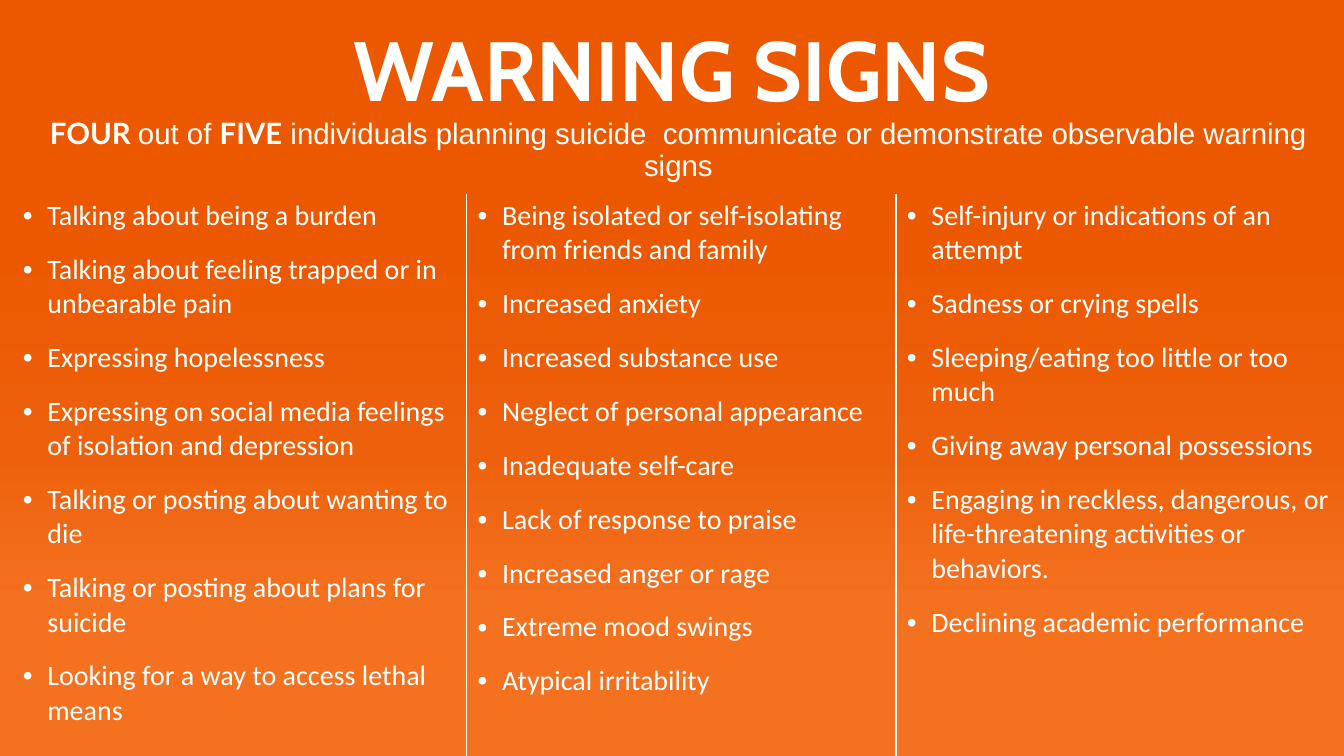
import copy

import lxml.etree
import pptx
import pptx.dml.color
import pptx.enum.text
import pptx.oxml
import pptx.oxml.ns
import pptx.util
from pptx.util import Cm, Pt

COLORS = {"text": "FFFFFF", "bottom": "F47120", "middle": "ED610C", "top": "EC5800"}
WHITE = pptx.dml.color.RGBColor.from_string(COLORS["text"])
CENTER = pptx.enum.text.PP_ALIGN.CENTER
NO_GRID_STYLE = "{2D5ABB26-0587-4C30-8999-92F81FD0307C}"
qn = pptx.oxml.ns.qn

COLUMN_WIDTHS = [11.76, 10.82, 11.28]
ROW_HEIGHTS = [2.11, 16.28]
TEXT_INDENTS = [0.94, 0.64, 0.64]
BULLET_HANG = 0.62
BORDER_SIDES = [["lnR"], ["lnL", "lnR"], ["lnL"]]

HEADLINE = [
    ("FOUR ", "Lato", True),
    ("out of ", "Arial", False),
    ("FIVE", "Lato", True),
    (" individuals planning suicide  communicate or demonstrate observable warning signs",
     "Arial", False),
]
SIGNS = [
    ["Talking about being a burden",
     "Talking about feeling trapped or in unbearable pain",
     "Expressing hopelessness",
     "Expressing on social media feelings of isolation and depression",
     "Talking or posting about wanting to die",
     "Talking or posting about plans for suicide",
     "Looking for a way to access lethal means"],
    ["Being isolated or self-isolating from friends and family",
     "Increased anxiety",
     "Increased substance use",
     "Neglect of personal appearance",
     "Inadequate self-care",
     "Lack of response to praise",
     "Increased anger or rage",
     "Extreme mood swings",
     "Atypical irritability"],
    ["Self-injury or indications of an attempt",
     "Sadness or crying spells",
     "Sleeping/eating too little or too much",
     "Giving away personal possessions",
     "Engaging in reckless, dangerous, or life-threatening activities or behaviors.",
     "Declining academic performance"],
]


def style_font(font, name, size, bold=False):
    font.name = name
    font.size = Pt(size)
    font.bold = bold
    font.color.rgb = WHITE


def add_border(cell, side):
    """Put a thin white line on one side (lnL or lnR) of the cell."""
    line = pptx.oxml.parse_xml(
        f'<a:{side} {pptx.oxml.ns.nsdecls("a")} w="{Pt(1)}"><a:solidFill>'
        f'<a:srgbClr val="{COLORS["text"]}"/></a:solidFill></a:{side}>')
    properties = cell._tc.get_or_add_tcPr()
    properties.insert(len(properties.findall(qn("a:lnL"))), line)


deck = pptx.Presentation()
deck.slide_width, deck.slide_height = Cm(33.87), Cm(19.05)
page = deck.slides.add_slide(deck.slide_layouts[5])

# Background gradient, running from the bottom edge upwards
backdrop = page.background.fill
backdrop.gradient()
backdrop.gradient_angle = 90
stop_list = next(page.element.iter(qn("a:gsLst")))
stop_list.append(copy.deepcopy(stop_list[-1]))
for stop, (position, name) in zip(backdrop.gradient_stops,
                                  [(0.20, "bottom"), (0.40, "middle"), (0.68, "top")]):
    stop.position = position
    stop.color.rgb = pptx.dml.color.RGBColor.from_string(COLORS[name])

# Title
title = page.shapes.title
title.left, title.top, title.width, title.height = Cm(0.43), Cm(0.3), Cm(33), Cm(2.82)
title.text_frame.text = "WARNING SIGNS"
title.text_frame.vertical_anchor = pptx.enum.text.MSO_ANCHOR.MIDDLE
title.text_frame.auto_size = pptx.enum.text.MSO_AUTO_SIZE.SHAPE_TO_FIT_TEXT
title.text_frame.paragraphs[0].alignment = CENTER
style_font(title.text_frame.paragraphs[0].runs[0].font, "Cabin", 60, True)

# Table with a merged headline row and three columns of signs
frame = page.shapes.add_table(2, 3, 0, Cm(2.77), Cm(sum(COLUMN_WIDTHS)), Cm(sum(ROW_HEIGHTS)))
table = frame.table
table.first_row = table.horz_banding = False
next(frame._element.iter(qn("a:tableStyleId"))).text = NO_GRID_STYLE
for column, width in zip(table.columns, COLUMN_WIDTHS):
    column.width = Cm(width)
for row, height in zip(table.rows, ROW_HEIGHTS):
    row.height = Cm(height)
for cell in table.iter_cells():
    cell.fill.background()

headline = table.cell(0, 0)
headline.merge(table.cell(0, 2))
para = headline.text_frame.paragraphs[0]
para.alignment = CENTER
para.space_after = Pt(6)
para._p.get_or_add_pPr().set("marL", str(Cm(0.33)))
for text, font_name, bold in HEADLINE:
    span = para.add_run()
    span.text = text
    style_font(span.font, font_name, 21, bold)

for index, signs in enumerate(SIGNS):
    cell = table.cell(1, index)
    cell.text_frame.text = "\n".join(signs)
    for number, para in enumerate(cell.text_frame.paragraphs):
        para.space_before = Pt(6 if number else 0)
        para.space_after = Pt(8)
        properties = para._p.get_or_add_pPr()
        properties.set("marL", str(Cm(TEXT_INDENTS[index])))
        properties.set("indent", str(-Cm(BULLET_HANG)))
        lxml.etree.SubElement(properties, qn("a:buFont")).set("typeface", "Arial")
        lxml.etree.SubElement(properties, qn("a:buChar")).set("char", "•")
        style_font(para.runs[0].font, "Calibri", 20)
    for side in BORDER_SIDES[index]:
        add_border(cell, side)

deck.save("out.pptx")
